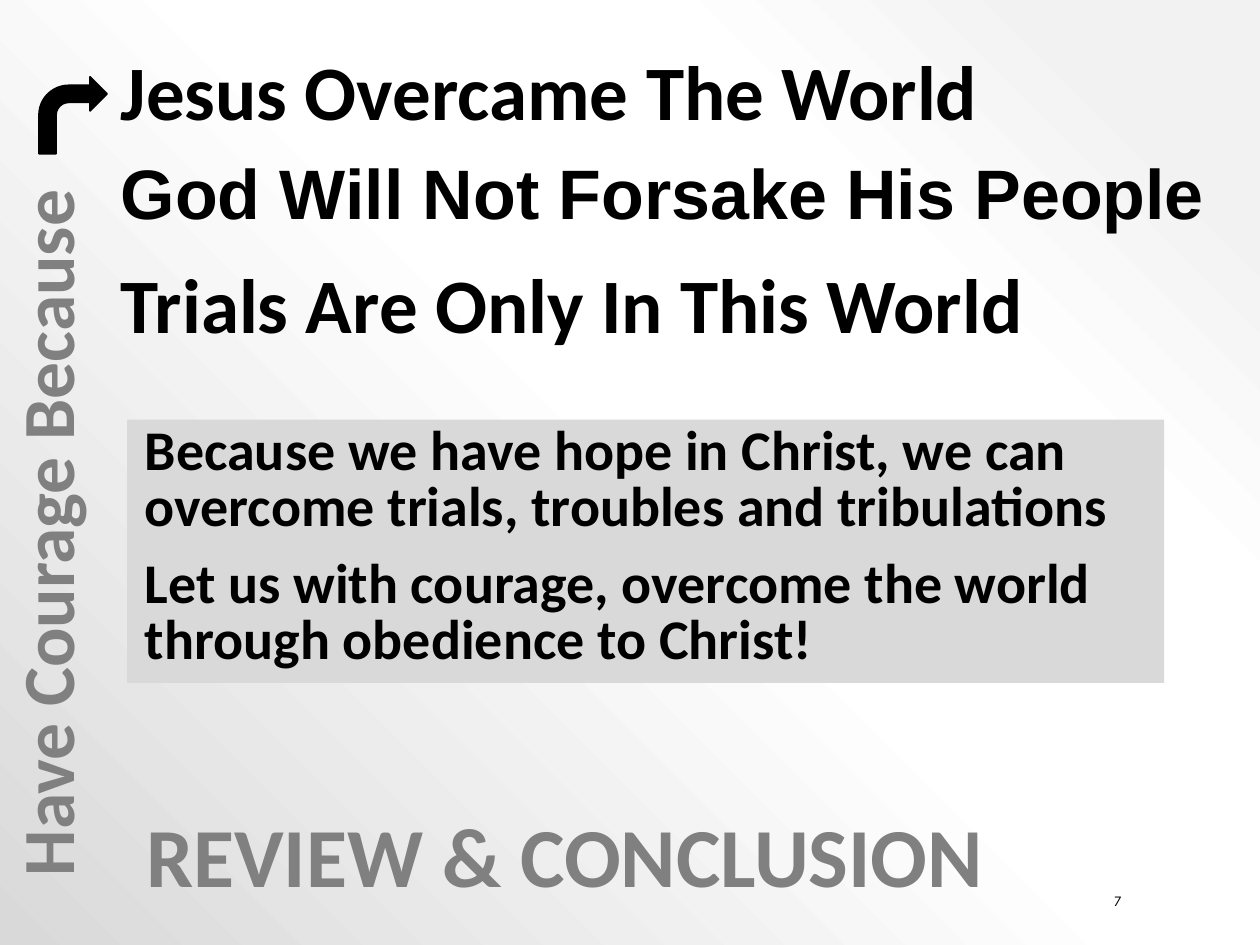
"""Build the review and conclusion slide."""
from lxml.etree import SubElement
from pptx import Presentation
from pptx.dml.color import RGBColor
from pptx.enum.shapes import MSO_SHAPE
from pptx.enum.text import MSO_ANCHOR, MSO_AUTO_SIZE, PP_ALIGN
from pptx.oxml.ns import qn
from pptx.util import Inches, Pt

BLACK = RGBColor(0x00, 0x00, 0x00)
GREY = RGBColor(0x80, 0x80, 0x80)
PANEL = RGBColor(0xD9, 0xD9, 0xD9)

TITLE = "REVIEW & CONCLUSION"
SIDE_LABEL = "Have Courage Because"
PAGE_NUMBER = "7"
POINTS = [
    ("Jesus Overcame The World", 0.38, 7.58, 0.77, "Calibri", 44),
    ("God Will Not Forsake His People", 1.21, 9.39, 0.71, "Arial", 40),
    ("Trials Are Only In This World", 2.07, 7.92, 0.77, "Calibri", 44),
]
LESSONS = [
    ("Because we have hope in Christ, we can overcome trials, troubles and tribulations", 6),
    ("Let us with courage, overcome the world through obedience to Christ!", 12),
]
BACKGROUND_STOPS = [(10, "F2F2F2"), (28, "FFFFFF"), (48, "FFFFFF"), (100, "D9D9D9")]


def set_background(s):
    s.background.fill.gradient()
    grad = s.element.find(".//" + qn("a:gradFill"))
    for child in list(grad):
        grad.remove(child)
    stops = SubElement(grad, qn("a:gsLst"))
    for position, color in BACKGROUND_STOPS:
        stop = SubElement(stops, qn("a:gs"), pos=str(position * 1000))
        SubElement(stop, qn("a:srgbClr"), val=color)
    circle = SubElement(grad, qn("a:path"), path="circle")
    SubElement(circle, qn("a:fillToRect"), l="100000", b="100000")


def style(p, size, font="Calibri", color=BLACK, bold=True, align=PP_ALIGN.LEFT):
    p.alignment = align
    p.font.name, p.font.size, p.font.bold = font, Pt(size), bold
    p.font.color.rgb = color


def set_insets(tf):
    tf.margin_left = tf.margin_right = Inches(0.08)
    tf.margin_top = tf.margin_bottom = Inches(0.04)


def add_text(s, text, box, wrap=True):
    sp = s.shapes.add_textbox(*map(Inches, box))
    tf = sp.text_frame
    tf.word_wrap = wrap
    tf.text = text
    return sp, tf, tf.paragraphs[0]


def add_block(s, preset, box, color):
    sp = s.shapes.add_shape(preset, *map(Inches, box))
    sp.shadow.inherit = False
    sp.fill.solid()
    sp.fill.fore_color.rgb = color
    return sp


def main():
    prs = Presentation()
    prs.slide_width, prs.slide_height = Inches(10), Inches(7.5)
    s = prs.slides.add_slide(prs.slide_layouts[5])
    set_background(s)

    title = s.shapes.title
    title.left, title.top, title.width, title.height = map(Inches, (1.08, 6.34, 8.08, 0.88))
    title.text = TITLE
    tf = title.text_frame
    set_insets(tf)
    tf.vertical_anchor = MSO_ANCHOR.TOP
    style(tf.paragraphs[0], 48, color=GREY)

    sp, tf, p = add_text(s, SIDE_LABEL, (-2.57, 3.84, 5.86, 0.78), wrap=False)
    sp.rotation = 270
    set_insets(tf)
    style(p, 42, color=GREY, align=PP_ALIGN.CENTER)

    arrow = add_block(s, MSO_SHAPE.BENT_ARROW, (0.31, 0.61, 0.54, 0.61), BLACK)
    arrow.line.color.rgb = BLACK
    arrow.line.width = Pt(1)

    for text, top, width, height, font, size in POINTS:
        sp, tf, p = add_text(s, text, (0.86, top, width, height))
        tf.auto_size = MSO_AUTO_SIZE.SHAPE_TO_FIT_TEXT
        p.line_spacing = 0.9
        style(p, size, font)

    panel = add_block(s, MSO_SHAPE.RECTANGLE, (1.01, 3.33, 8.23, 2.09), PANEL)
    panel.line.fill.background()
    tf = panel.text_frame
    tf.word_wrap = True
    tf.vertical_anchor = MSO_ANCHOR.TOP
    for i, (text, space) in enumerate(LESSONS):
        p = tf.add_paragraph() if i else tf.paragraphs[0]
        p.text = text
        p.line_spacing, p.space_before = Pt(32), Pt(space)
        p._p.get_or_add_pPr().set("marL", str(Inches(0.04)))
        style(p, 32)

    sp, tf, p = add_text(s, PAGE_NUMBER, (8.06, 7.05, 0.94, 0.2))
    tf.vertical_anchor = MSO_ANCHOR.MIDDLE
    style(p, 8.2, "League Spartan", bold=False, align=PP_ALIGN.RIGHT)

    prs.save("out.pptx")


if __name__ == "__main__":
    main()
